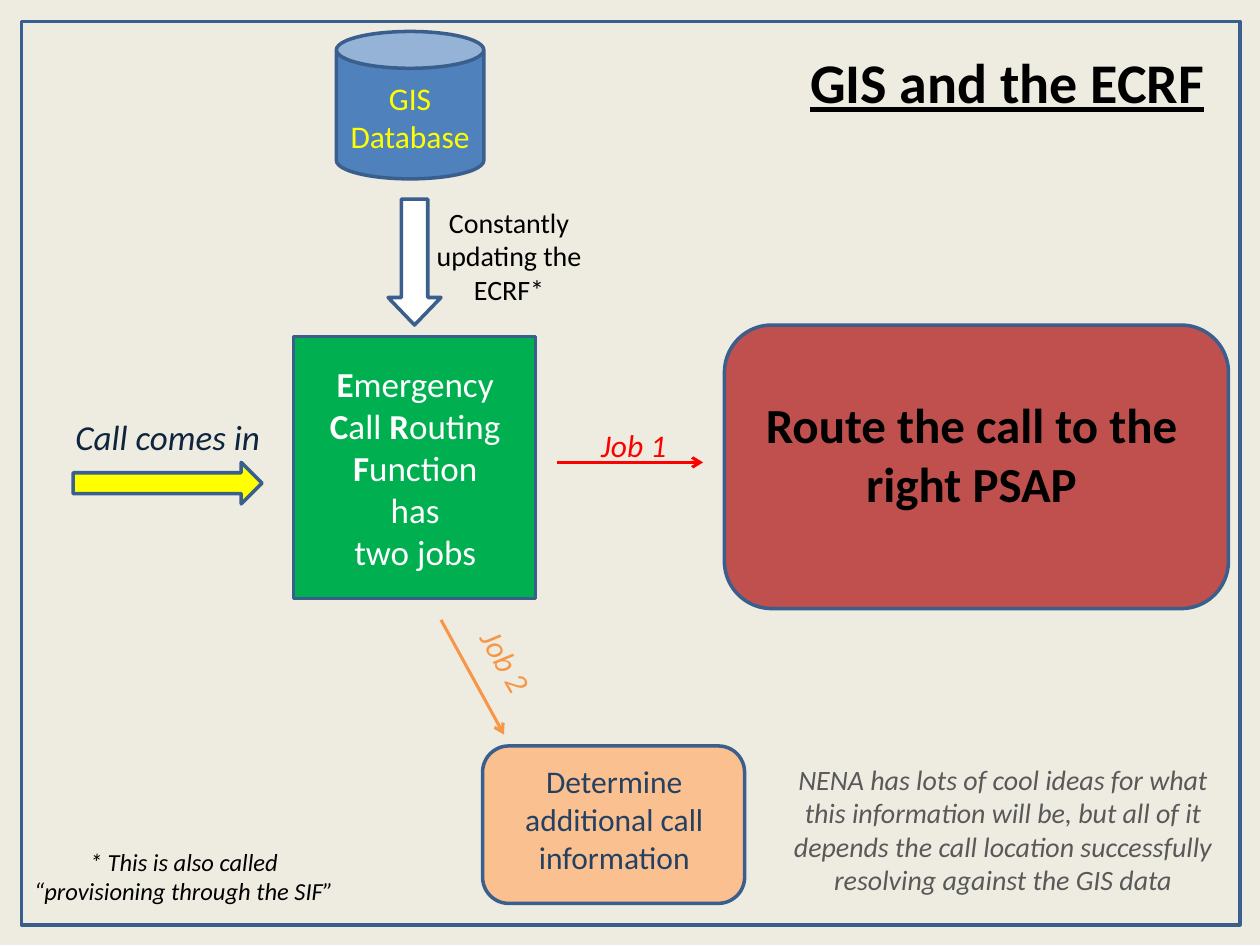
from dataclasses import dataclass
from typing import Optional

from lxml.etree import SubElement
from pptx import Presentation
from pptx.dml.color import RGBColor
from pptx.enum.shapes import MSO_CONNECTOR, MSO_SHAPE as Shp
from pptx.enum.text import MSO_ANCHOR, PP_ALIGN as Al
from pptx.oxml.ns import qn
from pptx.util import Inches, Pt


@dataclass(frozen=True)
class Theme:
    """Colours, type sizes and line widths of the slide."""
    font: str = "Calibri"
    background: str = "EEECE1"
    outline: str = "3A5F8C"
    database: str = "4F81BD"
    ecrf: str = "00B050"
    psap: str = "C0504D"
    info: str = "FAC090"
    info_text: str = "254061"
    call_text: str = "0F243E"
    remark: str = "595959"
    job1: str = "FF0000"
    job2: str = "F79646"
    yellow: str = "FFFF00"
    white: str = "FFFFFF"
    black: str = "000000"
    title_size: int = 32
    heading: int = 28
    large: int = 20
    medium: int = 18
    body: int = 16
    note: int = 14
    border: float = 2
    arrow: float = 1.75


T = Theme()


@dataclass(frozen=True)
class Box:
    """Position and size in inches."""
    x: float
    y: float
    w: float
    h: float


@dataclass(frozen=True)
class Node:
    """An outlined preset shape."""
    kind: Shp
    box: Box
    fill: Optional[str] = None
    adj: tuple[float, ...] = ()


@dataclass(frozen=True)
class Label:
    """A text whose paragraphs hold runs, with bold parts between bars."""
    box: Box
    paras: tuple[str, ...]
    size: int
    color: str
    align: Al = Al.CENTER
    bold: bool = False
    italic: bool = False
    underline: bool = False
    rotation: float = 0


@dataclass(frozen=True)
class Arrow:
    """A straight line with an open arrowhead at its end."""
    start: tuple[float, float]
    end: tuple[float, float]
    color: str


NODES = (
    Node(Shp.RECTANGLE, Box(0.17, 0.17, 9.67, 7.17)),
    Node(Shp.CAN, Box(2.67, 0.25, 1.17, 1.17), T.database),
    Node(Shp.DOWN_ARROW, Box(3.08, 1.58, 0.42, 1), T.white, (0.5, 0.52)),
    Node(Shp.RECTANGLE, Box(2.33, 2.67, 1.92, 2.08), T.ecrf),
    Node(Shp.ROUNDED_RECTANGLE, Box(5.75, 2.58, 4, 2.25), T.psap),
    Node(Shp.ROUNDED_RECTANGLE, Box(3.83, 5.92, 2.08, 1.25), T.info),
    Node(Shp.RIGHT_ARROW, Box(0.58, 3.67, 1.5, 0.33), T.yellow),
)

ARROWS = (
    Arrow((4.42, 3.67), (5.58, 3.67), T.job1),
    Arrow((3.5, 4.92), (4, 5.83), T.job2),
)

TITLE = Label(Box(6.33, 0.33, 3.33, 0.64), ("GIS and the ECRF",), T.title_size,
              T.black, Al.LEFT, bold=True, underline=True)

LABELS = (
    Label(Box(2.67, 0.58, 1.17, 0.71), ("GIS Database",), T.medium, T.yellow),
    Label(Box(3.08, 1.58, 1.92, 0.91), ("Constantly updating the ECRF*",),
          T.body, T.black),
    Label(Box(2.42, 2.83, 1.75, 1.78),
          ("|E|mergency |C|all |R|outing |F|unction", "has", "two jobs"),
          T.large, T.white),
    Label(Box(4.67, 3.33, 0.75, 0.4), ("Job 1",), T.medium, T.job1, Al.LEFT,
          italic=True),
    Label(Box(3.65, 5.06, 0.75, 0.4), ("Job 2",), T.medium, T.job2, Al.LEFT,
          italic=True, rotation=60.4),
    Label(Box(5.75, 3.08, 3.92, 1.04), ("Route the call to the right PSAP",),
          T.heading, T.black, bold=True),
    Label(Box(4, 6, 1.75, 1.01), ("Determine additional call information",),
          T.medium, T.info_text),
    Label(Box(6.17, 6, 3.58, 1.18),
          ("NENA has lots of cool ideas for what this information will be, "
           "but all of it depends the call location successfully resolving "
           "against the GIS data",), T.body, T.remark, italic=True),
    Label(Box(0.5, 3.25, 1.67, 0.44), ("Call comes in",), T.large, T.call_text,
          Al.LEFT, italic=True),
    Label(Box(0.17, 6.67, 2.58, 0.57),
          ("* This is also called “provisioning through the SIF”",),
          T.note, T.black, italic=True),
)


def rgb(color: str) -> RGBColor:
    """Turn a hex string into a colour."""
    return RGBColor.from_string(color)


def place(box: Box) -> tuple[int, ...]:
    """Give a box as four lengths."""
    return tuple(Inches(v) for v in (box.x, box.y, box.w, box.h))


def draw_node(s, node: Node) -> None:
    """Draw a preset shape with the common outline."""
    sp = s.shapes.add_shape(node.kind, *place(node.box))
    sp.shadow.inherit = False
    for i, value in enumerate(node.adj):
        sp.adjustments[i] = value
    if node.fill:
        sp.fill.solid()
        sp.fill.fore_color.rgb = rgb(node.fill)
    else:
        sp.fill.background()
    sp.line.color.rgb = rgb(T.outline)
    sp.line.width = Pt(T.border)


def draw_arrow(s, arrow: Arrow) -> None:
    """Draw a line with an arrowhead and no shadow."""
    ends = [Inches(v) for v in arrow.start + arrow.end]
    cx = s.shapes.add_connector(MSO_CONNECTOR.STRAIGHT, *ends)
    cx.line.color.rgb = rgb(arrow.color)
    cx.line.width = Pt(T.arrow)
    SubElement(cx.line._get_or_add_ln(), qn("a:tailEnd"), type="arrow")
    SubElement(cx._element.spPr, qn("a:effectLst"))


def write_label(sp, label: Label) -> None:
    """Place a text shape and write its runs."""
    sp.left, sp.top, sp.width, sp.height = place(label.box)
    sp.rotation = label.rotation
    tf = sp.text_frame
    tf.word_wrap = True
    tf.vertical_anchor = MSO_ANCHOR.TOP
    for i, text in enumerate(label.paras):
        p = tf.add_paragraph() if i else tf.paragraphs[0]
        p.alignment = label.align
        for j, part in enumerate(text.split("|")):
            if part:
                r = p.add_run()
                r.text = part
                r.font.name = T.font
                r.font.size = Pt(label.size)
                r.font.color.rgb = rgb(label.color)
                r.font.bold = label.bold or j % 2 == 1
                r.font.italic = label.italic
                r.font.underline = label.underline


def main() -> None:
    """Build the slide and save it."""
    prs = Presentation()
    prs.slide_width, prs.slide_height = Inches(10), Inches(7.5)
    s = prs.slides.add_slide(prs.slide_layouts[5])
    s.background.fill.solid()
    s.background.fill.fore_color.rgb = rgb(T.background)
    write_label(s.shapes.title, TITLE)
    for node in NODES:
        draw_node(s, node)
    for arrow in ARROWS:
        draw_arrow(s, arrow)
    for label in LABELS:
        write_label(s.shapes.add_textbox(*place(label.box)), label)
    prs.save("out.pptx")


if __name__ == "__main__":
    main()
